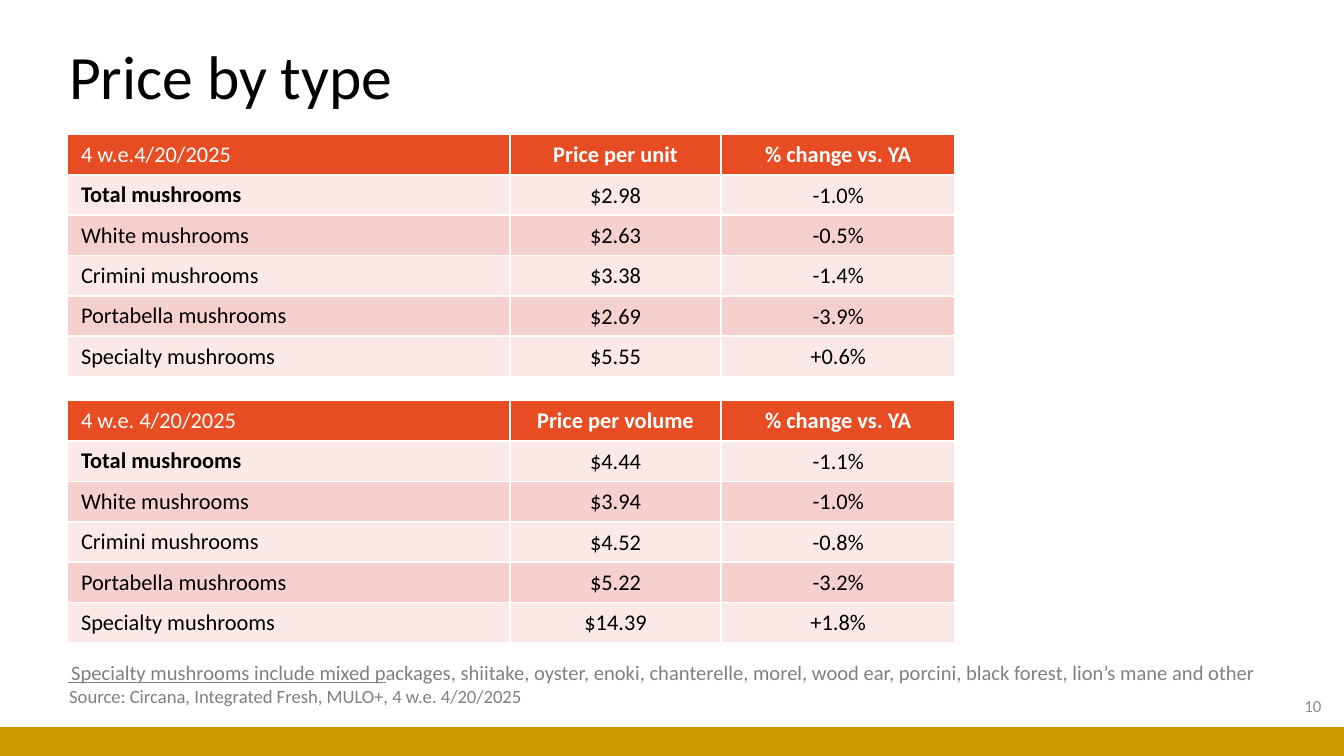
from dataclasses import dataclass

from lxml.etree import SubElement
from pptx import Presentation
from pptx.dml.color import RGBColor as RGB
from pptx.enum.shapes import MSO_CONNECTOR as CONN, MSO_SHAPE as SHAPE
from pptx.enum.text import MSO_ANCHOR as ANCHOR, MSO_AUTO_SIZE as AUTO, PP_ALIGN as ALIGN
from pptx.oxml.ns import qn
from pptx.util import Pt


@dataclass(frozen=True)
class Theme:
    font: str = "Calibri"
    black: str = "000000"
    white: str = "FFFFFF"
    gray: str = "808080"
    page_gray: str = "8C8C8C"
    gold: str = "CC9900"
    header: str = "E84C22"
    bands: tuple = ("FBE9E8", "F6D0CD")
    title_size: float = 33
    table_size: float = 12
    note_size: float = 11
    source_size: float = 10
    page_size: float = 9


class SlideBuilder:
    def __init__(self, slide, theme):
        self.s = slide
        self.theme = theme

    def run(self, p, text, size, color, bold=False):
        r = p.add_run()
        r.text = text
        r.font.name = self.theme.font
        r.font.size = Pt(size)
        r.font.bold = bold
        r.font.color.rgb = RGB.from_string(color)

    def bar(self, x, y, w, h, color):
        sp = self.s.shapes.add_shape(SHAPE.RECTANGLE, Pt(x), Pt(y), Pt(w), Pt(h))
        sp.shadow.inherit = False
        sp.fill.solid()
        sp.fill.fore_color.rgb = RGB.from_string(color)
        sp.line.fill.background()

    def line(self, x1, y1, x2, y2, color, width):
        ln = self.s.shapes.add_connector(CONN.STRAIGHT, Pt(x1), Pt(y1), Pt(x2), Pt(y2))
        ln.line.color.rgb = RGB.from_string(color)
        ln.line.width = Pt(width)
        SubElement(ln._element.spPr, qn("a:effectLst"))

    def text(self, x, y, w, h, text, size, color, align=ALIGN.LEFT,
             anchor=ANCHOR.MIDDLE, spacing=1.0, wrap=True):
        tf = self.s.shapes.add_textbox(Pt(x), Pt(y), Pt(w), Pt(h)).text_frame
        tf.word_wrap = wrap
        tf.auto_size = AUTO.NONE if wrap else AUTO.SHAPE_TO_FIT_TEXT
        tf.vertical_anchor = anchor
        p = tf.paragraphs[0]
        p.alignment = align
        p.line_spacing = spacing
        self.run(p, text, size, color)

    def borders(self, cell):
        tc_pr = cell._tc.get_or_add_tcPr()
        for side in ("a:lnL", "a:lnR", "a:lnT", "a:lnB"):
            ln = SubElement(tc_pr, qn(side), w=str(Pt(1)))
            fill = SubElement(ln, qn("a:solidFill"))
            SubElement(fill, qn("a:srgbClr"), val=self.theme.white)

    def cell(self, cell, text, row, col):
        t = self.theme
        is_header, is_label = row == 0, col == 0
        self.borders(cell)
        cell.fill.solid()
        fill = t.header if is_header else t.bands[(row - 1) % 2]
        cell.fill.fore_color.rgb = RGB.from_string(fill)
        cell.vertical_anchor = ANCHOR.TOP if is_header else ANCHOR.MIDDLE
        if not is_header and not is_label:
            cell.margin_left = cell.margin_right = cell.margin_top = Pt(0.7)
            cell.margin_bottom = Pt(0)
        p = cell.text_frame.paragraphs[0]
        p.alignment = ALIGN.LEFT if is_label else ALIGN.CENTER
        bold = is_header != is_label if row < 2 else False
        self.run(p, text, t.table_size, t.white if is_header else t.black, bold)

    def table(self, x, y, widths, row_height, rows):
        frame = self.s.shapes.add_table(len(rows), len(widths), Pt(x), Pt(y),
                                        Pt(sum(widths)), Pt(row_height * len(rows)))
        tbl = frame.table
        for column, width in zip(tbl.columns, widths):
            column.width = Pt(width)
        for i, values in enumerate(rows):
            tbl.rows[i].height = Pt(row_height)
            for j, value in enumerate(values):
                self.cell(tbl.cell(i, j), value, i, j)


TYPES = [f"{kind} mushrooms" for kind in ("Total", "White", "Crimini", "Portabella", "Specialty")]
PRICE_TABLES = [
    (72, ("4 w.e.4/20/2025", "Price per unit"),
     ("$2.98", "$2.63", "$3.38", "$2.69", "$5.55"),
     ("-1.0%", "-0.5%", "-1.4%", "-3.9%", "+0.6%")),
    (214.6, ("4 w.e. 4/20/2025", "Price per volume"),
     ("$4.44", "$3.94", "$4.52", "$5.22", "$14.39"),
     ("-1.1%", "-1.0%", "-0.8%", "-3.2%", "+1.8%")),
]


def main():
    prs = Presentation()
    prs.slide_width, prs.slide_height = Pt(720), Pt(405)
    theme = Theme()
    b = SlideBuilder(prs.slides.add_slide(prs.slide_layouts[6]), theme)

    b.bar(0, 389.5, 720, 15.5, theme.gold)
    b.text(30, 3.6, 620.6, 78.5, "Price by type", theme.title_size, theme.black, spacing=0.9)
    b.text(553, 367.2, 162, 21.6, "10", theme.page_size, theme.page_gray, align=ALIGN.RIGHT)
    b.line(36.7, 365.8, 206.6, 365.8, theme.gray, 0.5)
    b.text(30, 363.6, 267.8, 19.4, "Source: Circana, Integrated Fresh, MULO+, 4 w.e. 4/20/2025",
           theme.source_size, theme.gray, anchor=ANCHOR.TOP, wrap=False)
    b.text(31, 350, 651.6, 20.6,
           "Specialty mushrooms include mixed packages, shiitake, oyster, enoki, chanterelle, "
           "morel, wood ear, porcini, black forest, lion’s mane and other",
           theme.note_size, theme.gray, anchor=ANCHOR.TOP, wrap=False)

    for top, heading, prices, changes in PRICE_TABLES:
        rows = [(*heading, "% change vs. YA"), *zip(TYPES, prices, changes)]
        b.table(36.2, top, (237, 113.2, 125.4), 21.6, rows)

    prs.save("out.pptx")


if __name__ == "__main__":
    main()
